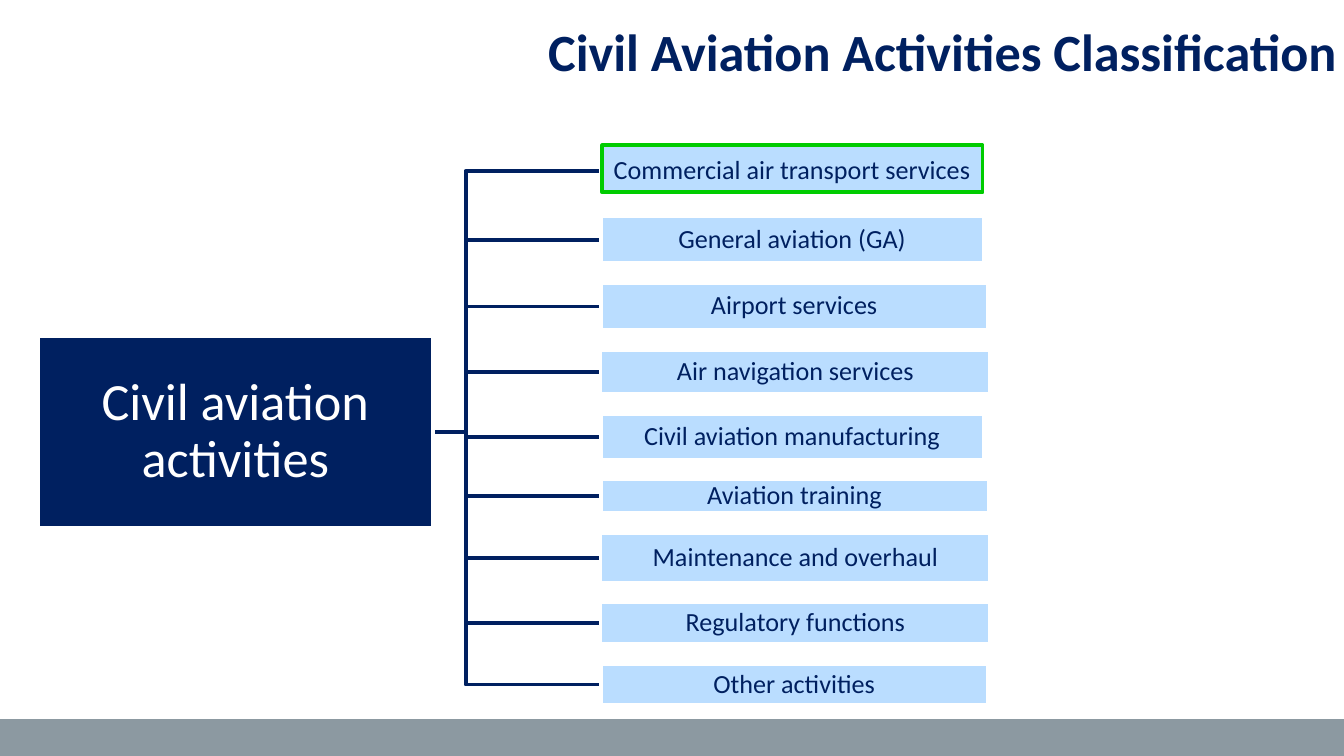
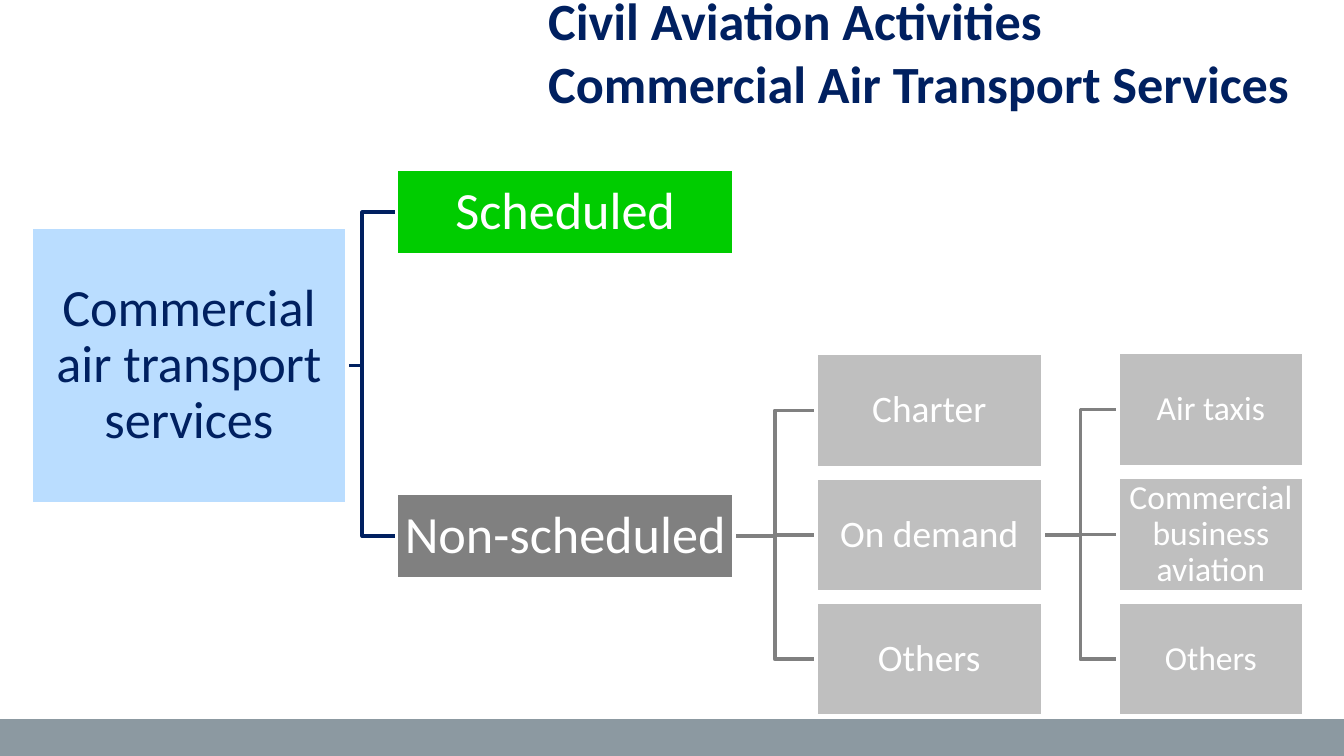
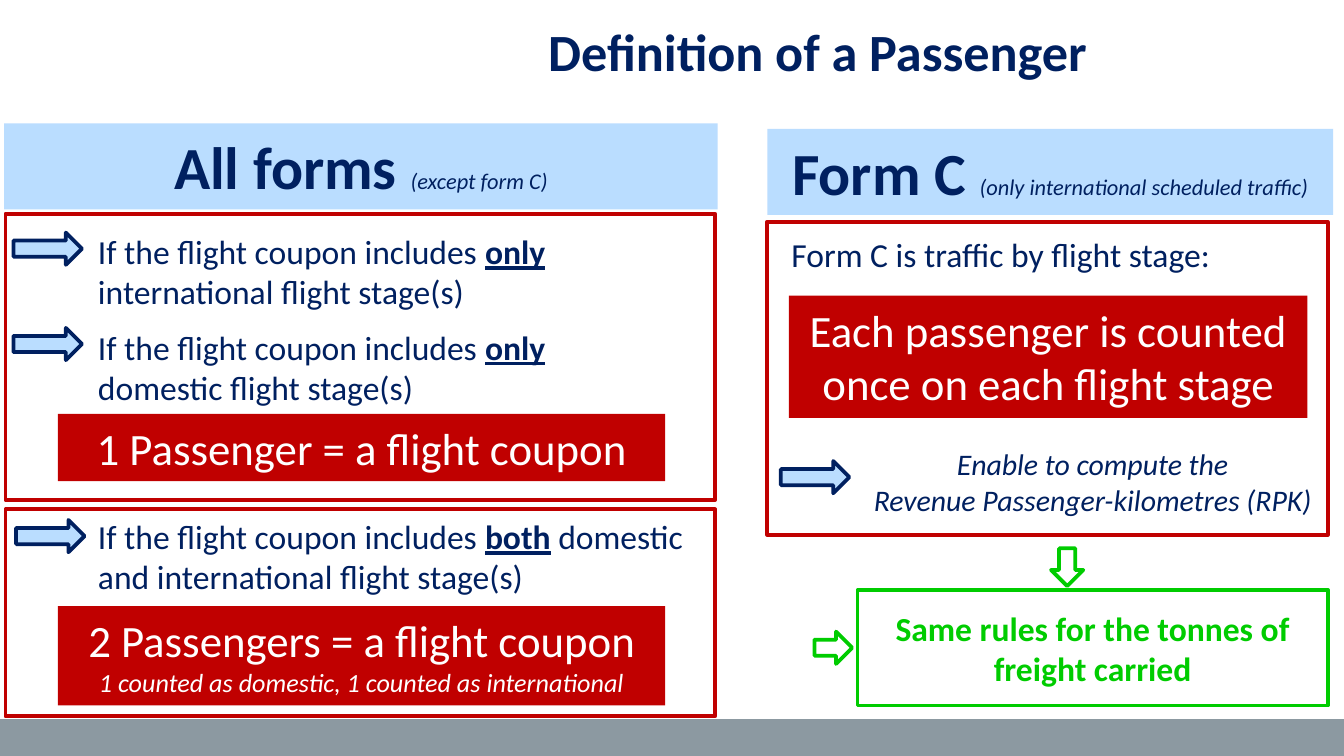
from dataclasses import dataclass

from pptx import Presentation
from pptx.dml.color import RGBColor
from pptx.enum.shapes import MSO_SHAPE as Preset
from pptx.enum.text import MSO_ANCHOR as Anchor, PP_ALIGN as Align
from pptx.util import Pt

COLORS = {
    "navy": "002060",
    "sky": "BADDFF",
    "green": "00CC00",
    "red": "C00000",
    "gray": "808080",
    "silver": "BFBFBF",
    "white": "FFFFFF",
    "band": "8C99A1",
}
FONT = "Calibri"
SLIDE_WIDTH, SLIDE_HEIGHT = 720, 405
LINE_WIDTH = 2
DEFAULT_INSETS = (7.2, 3.6)


@dataclass
class Box:
    left: float
    top: float
    width: float
    height: float

    @property
    def right(self):
        return self.left + self.width

    @property
    def middle(self):
        return self.top + self.height / 2

    def lengths(self):
        return [Pt(n) for n in (self.left, self.top, self.width, self.height)]


def rgb(name):
    return RGBColor.from_string(COLORS[name])


def write(shape, paragraphs, size, color="navy", align=Align.LEFT,
          anchor=Anchor.TOP, insets=DEFAULT_INSETS, spacing=None, **style):
    frame = shape.text_frame
    frame.word_wrap = True
    frame.vertical_anchor = anchor
    frame.margin_left = frame.margin_right = Pt(insets[0])
    frame.margin_top = frame.margin_bottom = Pt(insets[1])
    for index, runs in enumerate(paragraphs):
        paragraph = frame.add_paragraph() if index else frame.paragraphs[0]
        paragraph.alignment = align
        if spacing:
            paragraph.line_spacing = spacing
        for text, changes in runs:
            run = paragraph.add_run()
            run.text = text
            font = run.font
            font.name = FONT
            font.color.rgb = rgb(color)
            look = {"size": size, **style, **changes}
            font.size = Pt(look["size"])
            font.bold = look.get("bold", False)
            font.italic = look.get("italic", False)
            font.underline = look.get("underline", False)


def plain(*lines):
    return [[(line, {})] for line in lines]


def paint(shape, fill=None, line=None):
    shape.shadow.inherit = False
    if fill:
        shape.fill.solid()
        shape.fill.fore_color.rgb = rgb(fill)
    else:
        shape.fill.background()
    if line:
        shape.line.color.rgb = rgb(line)
        shape.line.width = Pt(LINE_WIDTH)
    else:
        shape.line.fill.background()


def add_block(slide, box, fill=None, line=None, preset=Preset.RECTANGLE):
    block = slide.shapes.add_shape(preset, *box.lengths())
    paint(block, fill, line)
    return block


def add_words(slide, box, paragraphs, size, **style):
    words = slide.shapes.add_textbox(*box.lengths())
    write(words, paragraphs, size, **style)


def add_arrow(slide, box, fill="sky", line="navy", rotation=0):
    arrow = add_block(slide, box, fill, line, Preset.RIGHT_ARROW)
    arrow.rotation = rotation


def add_node(slide, box, label, size, fill, color="white"):
    node = add_block(slide, box, fill, "white")
    write(node, plain(label), size, color, Align.CENTER, Anchor.MIDDLE,
          insets=(1, 1), spacing=0.9)


def add_branches(slide, parent, children, color, overlap=0):
    start = parent.right - overlap
    for child in children:
        spine = (start + child.left) / 2
        corners = [(spine, parent.middle), (spine, child.middle),
                   (child.left, child.middle)]
        builder = slide.shapes.build_freeform(Pt(start), Pt(parent.middle))
        builder.add_line_segments([(Pt(x), Pt(y)) for x, y in corners], close=False)
        paint(builder.convert_to_shape(), line=color)


def stack(left, top, sizes, gap):
    boxes = []
    for width, height in sizes:
        boxes.append(Box(left, top, width, height))
        top += height + gap
    return boxes


def start_slide(deck, *title):
    slide = deck.slides.add_slide(deck.slide_layouts[6])
    add_block(slide, Box(0, 385.2, SLIDE_WIDTH, SLIDE_HEIGHT - 385.2), "band")
    add_words(slide, Box(286.6, -2.9, 442, 60.5), plain(*title), 28,
              anchor=Anchor.MIDDLE, bold=True)
    return slide


def build_classification(deck):
    slide = start_slide(deck, "Civil Aviation Activities Classification")
    activities = [
        ("Commercial air transport services", 205.2, 27.4),
        ("General aviation (GA)", 205.2, 25.2),
        ("Airport services", 207.4, 25.2),
        ("Air navigation services", 208.8, 23.8),
        ("Civil aviation manufacturing", 205.2, 24.5),
        ("Aviation training", 207.8, 18),
        ("Maintenance and overhaul", 208.8, 26.6),
        ("Regulatory functions", 208.8, 22.3),
        ("Other activities", 207.4, 22.3),
    ]
    root = Box(20.2, 180, 211.7, 103)
    boxes = stack(321.8, 77.8, [activity[1:] for activity in activities], 10.6)
    add_branches(slide, root, boxes, "navy", overlap=54.8)
    add_node(slide, root, "Civil aviation activities", 28, "navy")
    for (label, *_), box in zip(activities, boxes):
        add_node(slide, box, label, 14, "sky", "navy")
    add_block(slide, Box(322.6, 77.8, 203.8, 25.2), line="green")


def build_transport_services(deck):
    slide = start_slide(deck, "Civil Aviation Activities",
                        "Commercial Air Transport Services")
    root = Box(16.6, 121.7, 169.2, 148.3)
    schedules = stack(212.4, 90.7, [(180.7, 46.1)] * 2, 127.4)
    services = stack(437, 189.4, [(121.7, 61.2)] * 3, 5.4)
    demands = stack(599, 188.8, [(99.4, 61.2)] * 3, 5.7)
    add_branches(slide, schedules[1], services, "gray")
    add_branches(slide, services[1], demands, "gray")
    add_branches(slide, root, schedules, "navy", overlap=10)

    add_node(slide, root, "Commercial air transport services", 28, "sky", "navy")
    add_node(slide, schedules[0], "Scheduled", 28, "green")
    add_node(slide, schedules[1], "Non-scheduled", 28, "gray")
    for box, label in zip(services, ("Charter", "On demand", "Others")):
        add_node(slide, box, label, 20, "silver")
    for box, label in zip(demands, ("Air taxis", "Commercial business aviation", "Others")):
        add_node(slide, box, label, 18, "silver")


def add_form_heading(slide, box, form, scope):
    heading = add_block(slide, box, "sky")
    runs = [(form + " ", {"bold": True}), (scope, {"size": 12, "italic": True})]
    write(heading, [runs], 32, align=Align.CENTER)


def add_rule(slide, box, *paragraphs):
    rule = add_block(slide, box, "red")
    write(rule, paragraphs, 24, "white", Align.CENTER)


def add_coupon_case(slide, top, width, arrow_box, stressed, ending):
    add_arrow(slide, arrow_box)
    runs = [("If the flight coupon includes ", {}),
            (stressed, {"bold": True, "underline": True}),
            (ending, {})]
    add_words(slide, Box(45.4, top, width, 51), [runs], 18)


def build_passenger_definition(deck):
    slide = start_slide(deck, "Definition of a Passenger")
    arrow_size = (36.7, 17.3)
    small_arrow_size = (20.2, 17.3)

    add_form_heading(slide, Box(2.2, 66.2, 382.3, 46.1), "All forms", "(except form C)")
    for top, height in ((114.5, 153.4), (272.9, 110.9)):
        add_block(slide, Box(2.9, top, 380.2, height), line="red")
    add_coupon_case(slide, 120.2, 337.7, Box(7.2, 124.6, *arrow_size),
                    "only", " international flight stage(s)")
    add_coupon_case(slide, 171.4, 320.4, Box(7.2, 175.7, *arrow_size),
                    "only", " domestic flight stage(s)")
    add_coupon_case(slide, 272.9, 337.7, Box(8.6, 278.6, *arrow_size),
                    "both", " domestic and international flight stage(s)")
    add_rule(slide, Box(31, 221.8, 325.4, 36),
             [("1 Passenger = a flight coupon", {})])
    add_rule(slide, Box(31, 324.7, 325.4, 53.3),
             [("2 Passengers = a flight coupon", {})],
             [("1 counted as domestic, 1 counted as international",
               {"size": 14, "italic": True})])

    add_form_heading(slide, Box(411.1, 69.1, 303.1, 46.1), "Form C",
                     "(only international scheduled traffic)")
    add_block(slide, Box(411.1, 118.8, 300.2, 167.8), line="red")
    add_words(slide, Box(416.9, 121.7, 300, 28.8),
              plain("Form C is traffic by flight stage:"), 18)
    add_rule(slide, Box(422.6, 158.4, 277.9, 65.5),
             [("Each passenger is counted once on each flight stage", {})])
    add_arrow(slide, Box(418.3, 247, *arrow_size))
    add_words(slide, Box(459.4, 235.4, 252, 46.1),
              plain("Enable to compute the", "Revenue Passenger-kilometres (RPK)"),
              16, align=Align.CENTER, italic=True)

    freight = add_block(slide, Box(459.4, 316.1, 252, 61.9), line="green")
    write(freight, plain("Same rules for the tonnes of freight carried"), 18,
          "green", Align.CENTER, Anchor.MIDDLE, bold=True)
    add_arrow(slide, Box(436.3, 338.4, *small_arrow_size), "white", "green")
    add_arrow(slide, Box(561.6, 295.2, *small_arrow_size), "white", "green", 90)


def main():
    deck = Presentation()
    deck.slide_width, deck.slide_height = Pt(SLIDE_WIDTH), Pt(SLIDE_HEIGHT)
    build_classification(deck)
    build_transport_services(deck)
    build_passenger_definition(deck)
    deck.save("out.pptx")


if __name__ == "__main__":
    main()
